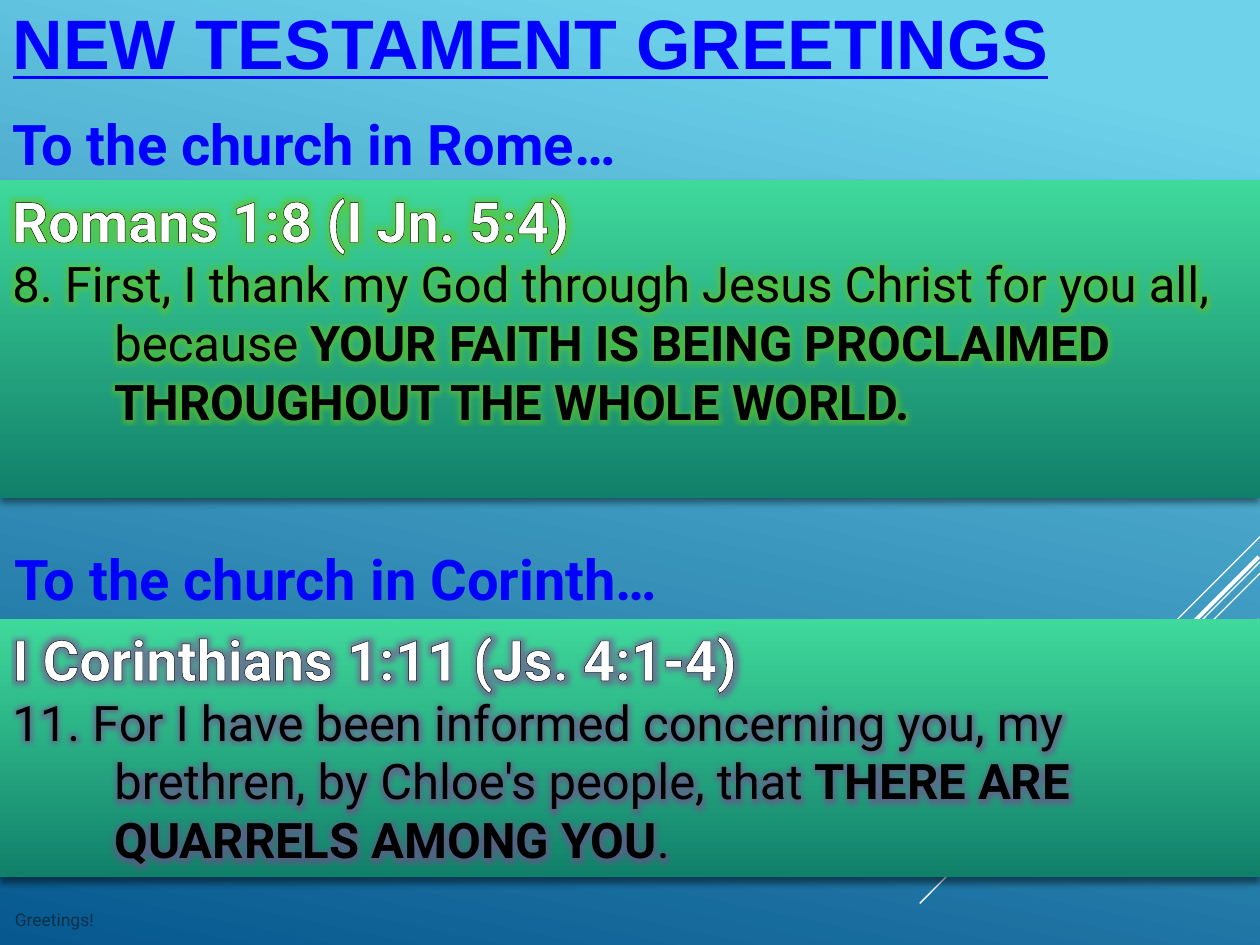
from lxml.etree import SubElement
from pptx import Presentation
from pptx.dml.color import RGBColor
from pptx.enum.shapes import MSO_CONNECTOR as Connector, MSO_SHAPE as Shape
from pptx.enum.text import MSO_ANCHOR as Anchor, MSO_AUTO_SIZE as AutoSize, PP_ALIGN as Align
from pptx.oxml.ns import qn
from pptx.util import Pt

COLORS = {
    "sky": "6ED2EB", "deep": "06588E", "mint": "3FD99B", "pine": "11806A",
    "blue": "0000FF", "white": "FFFFFF", "black": "000000", "navy": "0A304A",
    "olive": "507E0E", "green glow": "62C41C", "purple glow": "7A4A90",
}
WIDTH, HEIGHT = 720, 540
RAYS = [
    (720, 306.7, 660.2, 366.5, 0.75),
    (720, 321.1, 525.6, 516.2, 0.75),
    (720, 327.6, 596.2, 451.4, 0.75),
    (719.3, 318.2, 606.2, 431.3, 2.25),
    (719.3, 354.2, 637.2, 436.3, 2.25),
]
PASSAGES = [
    {
        "greeting": ("To the church in Rome…", 0, 59),
        "band": (103, 181.4),
        "glow": "green glow",
        "reference": "Romans 1:8 (I Jn. 5:4)",
        "verse": [
            ("8. First, I thank my God through Jesus Christ for you all, because ", False),
            ("YOUR FAITH IS BEING PROCLAIMED THROUGHOUT THE WHOLE WORLD.", True),
        ],
    },
    {
        "greeting": ("To the church in Corinth…", 1.4, 307.4),
        "band": (353.5, 147.6),
        "glow": "purple glow",
        "reference": "I Corinthians 1:11 (Js. 4:1-4)",
        "verse": [
            ("11. For I have been informed concerning you, my brethren, by Chloe's people, that ", False),
            ("THERE ARE QUARRELS AMONG YOU", True),
            (".", False),
        ],
    },
]


class GreetingSlide:
    """Holds the style and the current slide, and adds each kind of element."""

    def __init__(self, presentation):
        self.slide = presentation.slides.add_slide(presentation.slide_layouts[5])
        self.font = "Roboto"

    def color(self, name):
        return RGBColor.from_string(COLORS[name])

    def gradient(self, fill, angle, stops):
        fill.gradient()
        fill.gradient_angle = 360 - angle
        for stop, (position, name) in zip(fill.gradient_stops, stops):
            stop.position = position
            stop.color.rgb = self.color(name)

    def format(self, paragraph, size, color, bold=None, hanging=0, font=None):
        paragraph.alignment = Align.LEFT
        paragraph.font.name = font or self.font
        paragraph.font.size = Pt(size)
        paragraph.font.bold = bold
        paragraph.font.color.rgb = self.color(color)
        if hanging:
            properties = paragraph._p.get_or_add_pPr()
            properties.set("marL", str(Pt(hanging)))
            properties.set("indent", str(-Pt(hanging)))

    def solid(self, parent, name, alpha=None):
        color = SubElement(parent, qn("a:srgbClr"), val=COLORS[name])
        if alpha:
            SubElement(color, qn("a:alpha"), val=str(alpha * 1000))

    def outline(self, run, name, width):
        line = SubElement(run._r.get_or_add_rPr(), qn("a:ln"), w=str(Pt(width)))
        self.solid(SubElement(line, qn("a:solidFill")), name)

    def glow(self, run, name):
        effects = SubElement(run._r.get_or_add_rPr(), qn("a:effectLst"))
        self.solid(SubElement(effects, qn("a:glow"), rad=str(Pt(8))), name, 60)

    def background(self):
        self.gradient(self.slide.background.fill, 102, [(0.1, "sky"), (1, "deep")])

    def title(self, text):
        title = self.slide.shapes.title
        title.left, title.top, title.width, title.height = 0, 0, Pt(WIDTH), Pt(48)
        frame = title.text_frame
        frame.auto_size, frame.vertical_anchor = AutoSize.NONE, Anchor.MIDDLE
        paragraph = frame.paragraphs[0]
        run = paragraph.add_run()
        run.text = text
        self.outline(run, "white", 1)
        self.format(paragraph, 40, "blue", True, font="Arial")
        paragraph.font.underline = True

    def ray(self, x1, y1, x2, y2, width):
        line = self.slide.shapes.add_connector(Connector.STRAIGHT, Pt(x1), Pt(y1), Pt(x2), Pt(y2))
        line.line.color.rgb = self.color("white")
        line.line.width = Pt(width)
        SubElement(line._element.spPr, qn("a:effectLst"))

    def label(self, text, left, top, width, height, **style):
        box = self.slide.shapes.add_textbox(Pt(left), Pt(top), Pt(width), Pt(height))
        box.text_frame.word_wrap = True
        paragraph = box.text_frame.paragraphs[0]
        paragraph.text = text
        self.format(paragraph, **style)

    def band(self, top, height, reference, verse, glow):
        band = self.slide.shapes.add_shape(Shape.RECTANGLE, 0, Pt(top), Pt(WIDTH), Pt(height))
        self.gradient(band.fill, 90, [(0, "mint"), (1, "pine")])
        band.line.fill.background()
        band.shadow.inherit = False
        shadow = SubElement(band._element.spPr.find(qn("a:effectLst")), qn("a:outerShdw"),
                            blurRad=str(Pt(4)), dist=str(Pt(3)), dir="5400000", rotWithShape="0")
        self.solid(shadow, "black", 46)
        frame = band.text_frame
        frame.word_wrap, frame.vertical_anchor = True, Anchor.TOP
        frame.margin_right = Pt(5)

        heading = frame.paragraphs[0]
        run = heading.add_run()
        run.text = reference
        self.outline(run, "black", 0.75)
        self.glow(run, glow)
        self.format(heading, 32, "white", True, hanging=36)

        paragraph = frame.add_paragraph()
        for text, bold in verse:
            run = paragraph.add_run()
            run.text = text
            run.font.bold = bold
            if bold:
                self.outline(run, "olive", 0.71)
            self.glow(run, glow)
        self.format(paragraph, 28, "black", hanging=58.3)


def main():
    presentation = Presentation()
    presentation.slide_width, presentation.slide_height = Pt(WIDTH), Pt(HEIGHT)
    page = GreetingSlide(presentation)
    page.background()
    for ray in RAYS:
        page.ray(*ray)
    page.title("NEW TESTAMENT GREETINGS")
    page.label("Greetings!", 1.4, 516.2, 228, 23.8, size=10, color="navy")
    for passage in PASSAGES:
        page.band(*passage["band"], passage["reference"], passage["verse"], passage["glow"])
        page.label(*passage["greeting"], WIDTH, 46, size=32, color="blue", bold=True, hanging=36)
    presentation.save("out.pptx")


if __name__ == "__main__":
    main()
